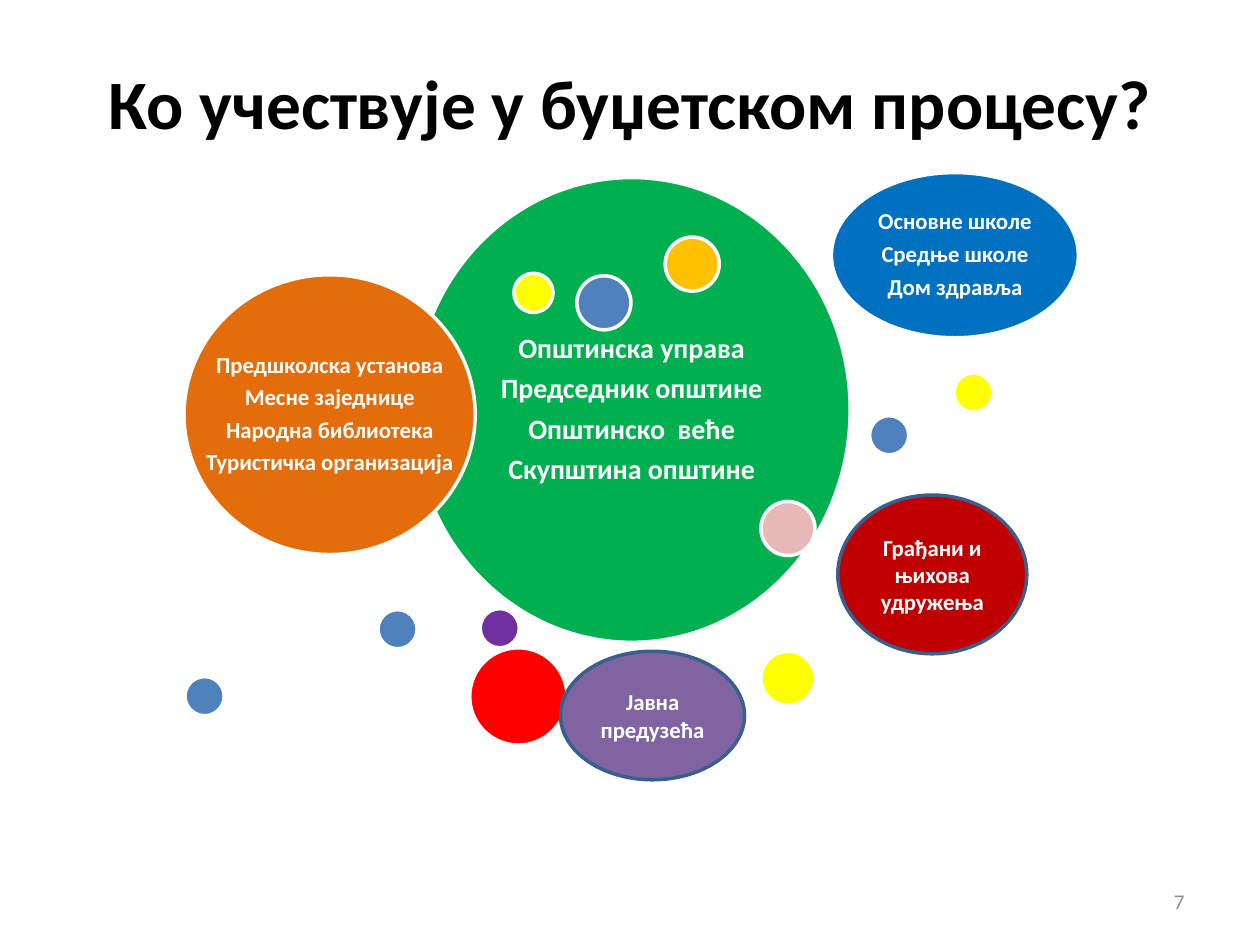
from dataclasses import dataclass

from pptx import Presentation
from pptx.dml.color import RGBColor
from pptx.enum.shapes import MSO_SHAPE
from pptx.enum.text import MSO_ANCHOR, PP_ALIGN
from pptx.util import Cm, Pt


@dataclass(frozen=True)
class Theme:
    font: str = "Calibri"
    black: str = "000000"
    grey: str = "8C8C8C"
    white: str = "FFFFFF"
    outline: str = "3A5F8C"
    green: str = "00B050"
    orange: str = "E46C0A"
    azure: str = "0070C0"
    crimson: str = "C00000"
    violet: str = "8064A2"
    gold: str = "FFC000"
    purple: str = "7030A0"
    blue: str = "4F81BD"
    yellow: str = "FFFF00"
    red: str = "FF0000"
    pink: str = "E6B9B8"
    title: float = 39.6
    centre: float = 16
    group: float = 13
    number: float = 12


theme = Theme()
presentation = Presentation()
presentation.slide_width, presentation.slide_height = Cm(25.4), Cm(19.05)
slide = presentation.slides.add_slide(presentation.slide_layouts[6])


def write(frame, lines, size, color, bold=True, align=PP_ALIGN.CENTER):
    frame.vertical_anchor = MSO_ANCHOR.MIDDLE
    frame.text = "\n".join(lines)
    frame.word_wrap = len(lines) == 1
    for paragraph in frame.paragraphs:
        paragraph.alignment = align
        paragraph.font.name = theme.font
        paragraph.font.size = Pt(size)
        paragraph.font.bold = bold
        paragraph.font.color.rgb = RGBColor.from_string(color)
        if len(lines) > 1:
            paragraph.line_spacing = 0.9
            paragraph.space_after = Pt(size * 0.35)


def add_bubble(left, top, width, height, fill, outline):
    bubble = slide.shapes.add_shape(MSO_SHAPE.OVAL, Cm(left), Cm(top), Cm(width), Cm(height))
    bubble.shadow.inherit = False
    bubble.fill.solid()
    bubble.fill.fore_color.rgb = RGBColor.from_string(fill)
    bubble.line.color.rgb = RGBColor.from_string(outline)
    bubble.line.width = Pt(2)
    return bubble


title = slide.shapes.add_textbox(Cm(1.27), Cm(0.76), Cm(22.86), Cm(2.57))
write(title.text_frame, ["Ко учествује у буџетском процесу?"], theme.title, theme.black)

page_number = slide.shapes.add_textbox(Cm(18.21), Cm(17.65), Cm(5.92), Cm(1.02))
write(page_number.text_frame, ["7"], theme.number, theme.grey, False, PP_ALIGN.RIGHT)

municipality = ["Општинска управа", "Председник општине", "Општинско  веће", "Скупштина општине"]
institutions = ["Предшколска установа", "Месне заједнице", "Народна библиотека", "Туристичка организација"]
schools = ["Основне школе", "Средње школе", "Дом здравља"]
citizens = ["Грађани и њихова удружења"]
enterprises = ["Јавна предузећа"]

small, medium, large = 0.79, 1.09, 1.96
dots = [
    (13.41, 4.78, medium, theme.gold),
    (9.68, 12.27, small, theme.purple),
    (17.53, 8.38, small, theme.blue),
    (15.34, 13.13, medium, theme.yellow),
    (10.36, 5.51, small, theme.yellow),
    (7.62, 12.29, small, theme.blue),
    (11.63, 5.56, medium, theme.blue),
    (9.47, 13.06, large, theme.red),
    (15.34, 10.11, medium, theme.pink),
    (3.73, 13.64, small, theme.blue),
    (19.23, 7.52, small, theme.yellow),
]
participants = [
    (8.33, 3.58, 8.81, 9.37, theme.green, theme.white, theme.centre, municipality),
    (3.71, 5.54, 5.87, 5.64, theme.orange, theme.white, theme.group, institutions),
    (16.76, 3.48, 4.98, 3.33, theme.azure, theme.white, theme.group, schools),
    (16.89, 9.98, 3.81, 3.2, theme.crimson, theme.outline, theme.group, citizens),
    (11.3, 13.13, 3.71, 2.59, theme.violet, theme.outline, theme.group, enterprises),
]

for left, top, width, height, fill, outline, size, names in participants[:3]:
    write(add_bubble(left, top, width, height, fill, outline).text_frame, names, size, theme.white)

for left, top, diameter, fill in dots:
    add_bubble(left, top, diameter, diameter, fill, theme.white)

for left, top, width, height, fill, outline, size, names in participants[3:]:
    write(add_bubble(left, top, width, height, fill, outline).text_frame, names, size, theme.white)

presentation.save("out.pptx")
